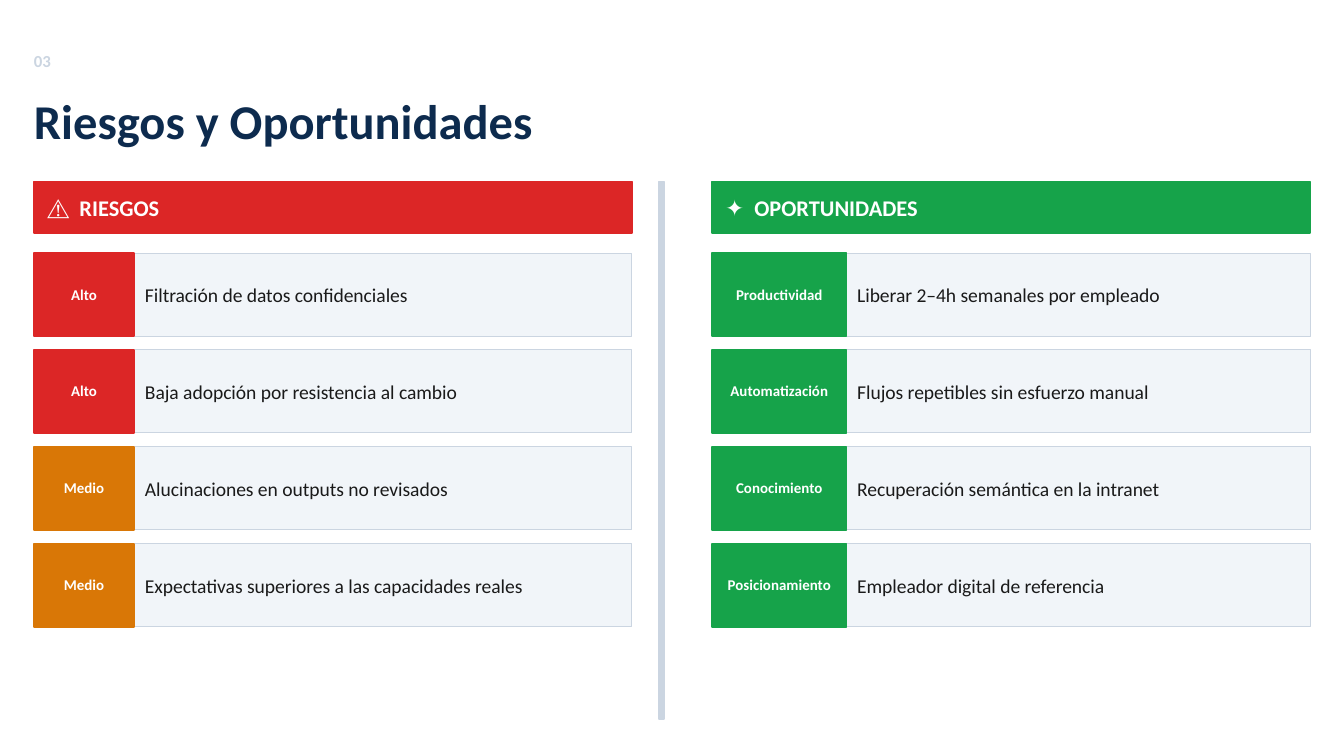
import pptx
import pptx.util
from pptx.dml.color import RGBColor
from pptx.enum.shapes import MSO_SHAPE
from pptx.enum.text import MSO_ANCHOR, MSO_AUTO_SIZE, PP_ALIGN

Cm = pptx.util.Cm
Pt = pptx.util.Pt

NAVY = RGBColor(0x0D, 0x2B, 0x4E)
RED = RGBColor(0xDC, 0x26, 0x26)
ORANGE = RGBColor(0xD9, 0x77, 0x06)
GREEN = RGBColor(0x16, 0xA3, 0x4A)
GREY = RGBColor(0xCB, 0xD5, 0xE1)
PALE = RGBColor(0xF1, 0xF5, 0xF9)
INK = RGBColor(0x1A, 0x1A, 0x1A)
WHITE = RGBColor(0xFF, 0xFF, 0xFF)

MARGIN = 0.64
COLUMN_WIDTH = 11.3
HEADER_TOP = 3.43
ROWS_TOP = 4.78
ROW_HEIGHT = 1.57
ROW_STEP = 1.83

presentation = pptx.Presentation()
presentation.slide_width = Cm(25.4)
presentation.slide_height = Cm(14.28)
slide = presentation.slides.add_slide(presentation.slide_layouts[5])


def add_block(left, top, width, height, fill, line, line_width=1):
    shape = slide.shapes.add_shape(
        MSO_SHAPE.RECTANGLE, Cm(left), Cm(top), Cm(width), Cm(height))
    shape.shadow.inherit = False
    shape.fill.solid()
    shape.fill.fore_color.rgb = fill
    shape.line.color.rgb = line
    shape.line.width = Pt(line_width)


def write(shape, text, size, color, bold=True, alignment=PP_ALIGN.LEFT):
    """Fill a text shape with one vertically centred line, without margins."""
    frame = shape.text_frame
    frame.text = text
    frame.word_wrap = True
    frame.auto_size = MSO_AUTO_SIZE.NONE
    frame.vertical_anchor = MSO_ANCHOR.MIDDLE
    frame.margin_left = frame.margin_right = 0
    frame.margin_top = frame.margin_bottom = 0
    paragraph = frame.paragraphs[0]
    paragraph.alignment = alignment
    paragraph.font.name = "Calibri"
    paragraph.font.size = Pt(size)
    paragraph.font.bold = bold
    paragraph.font.color.rgb = color


# Section number and title
number = slide.shapes.add_textbox(Cm(MARGIN), Cm(0.71), Cm(1.27), Cm(0.89))
write(number, "03", 9, GREY)

title = slide.shapes.title
title.left, title.top, title.width, title.height = Cm(MARGIN), Cm(1.57), Cm(24.13), Cm(1.4)
write(title, "Riesgos y Oportunidades", 26, NAVY)

# Columns: left edge, heading, heading colour, label width, text width, rows
columns = [
    (MARGIN, "⚠  RIESGOS", RED, 1.9, 8.89, [
        ("Alto", RED, "Filtración de datos confidenciales"),
        ("Alto", RED, "Baja adopción por resistencia al cambio"),
        ("Medio", ORANGE, "Alucinaciones en outputs no revisados"),
        ("Medio", ORANGE, "Expectativas superiores a las capacidades reales"),
    ]),
    (13.46, "✦  OPORTUNIDADES", GREEN, 2.54, 8.26, [
        ("Productividad", GREEN, "Liberar 2–4h semanales por empleado"),
        ("Automatización", GREEN, "Flujos repetibles sin esfuerzo manual"),
        ("Conocimiento", GREEN, "Recuperación semántica en la intranet"),
        ("Posicionamiento", GREEN, "Empleador digital de referencia"),
    ]),
]

for left, heading, heading_color, label_width, text_width, rows in columns:
    add_block(left, HEADER_TOP, COLUMN_WIDTH, 0.97, heading_color, heading_color)
    heading_box = slide.shapes.add_textbox(
        Cm(left + 0.25), Cm(HEADER_TOP + 0.08), Cm(COLUMN_WIDTH - 0.5), Cm(0.81))
    write(heading_box, heading, 12, WHITE)

    for index, (label, label_color, text) in enumerate(rows):
        top = ROWS_TOP + index * ROW_STEP
        add_block(left, top, COLUMN_WIDTH, ROW_HEIGHT, PALE, GREY, 0.5)
        add_block(left, top, label_width, ROW_HEIGHT, label_color, label_color)
        label_box = slide.shapes.add_textbox(
            Cm(left), Cm(top + 0.46), Cm(label_width), Cm(0.63))
        write(label_box, label, 8, WHITE, alignment=PP_ALIGN.CENTER)
        text_box = slide.shapes.add_textbox(
            Cm(left + label_width + 0.2), Cm(top + 0.3), Cm(text_width), Cm(0.97))
        write(text_box, text, 10.5, INK, bold=False)

# Divider between the columns
add_block(12.45, HEADER_TOP, 0.1, 10.16, GREY, GREY)

presentation.save("out.pptx")
